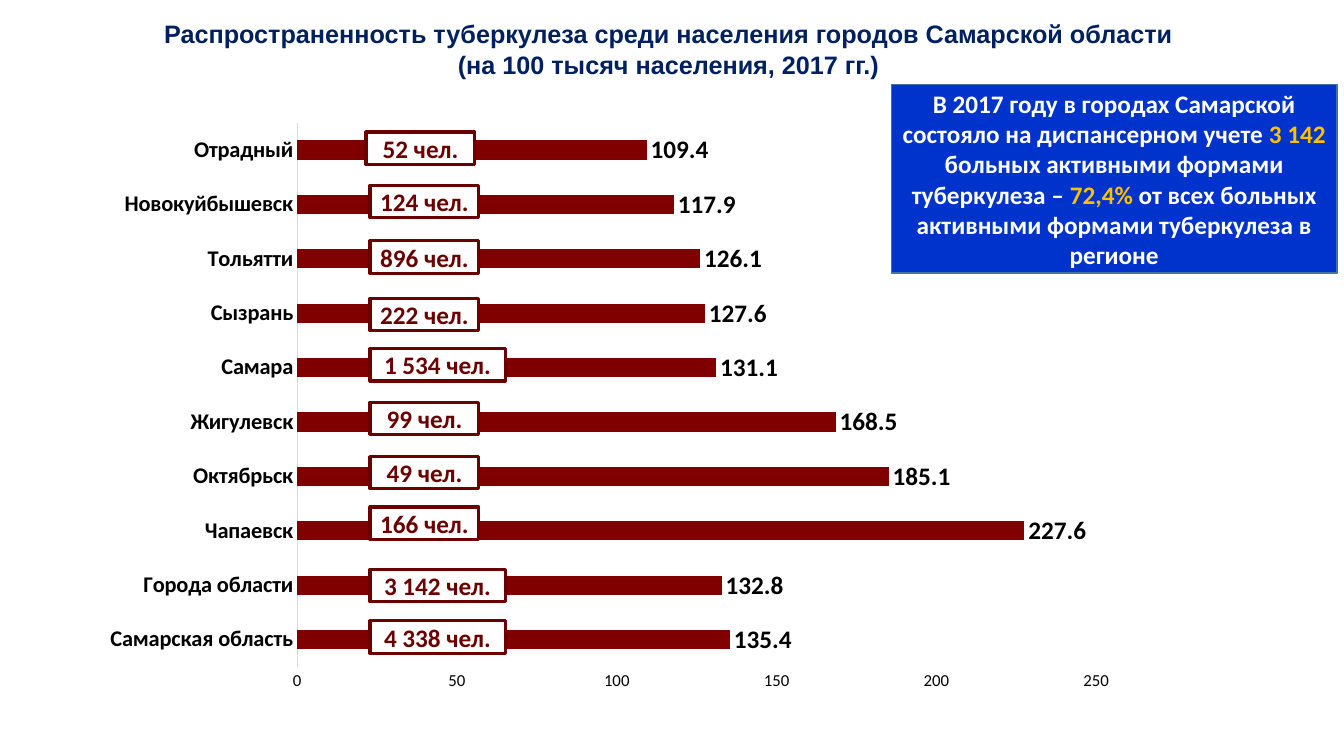
import pptx
import pptx.chart.data
import pptx.dml.color
import pptx.enum.chart
import pptx.enum.shapes
import pptx.enum.text
import pptx.oxml
import pptx.util
from dataclasses import dataclass

Inches = pptx.util.Inches
Pt = pptx.util.Pt
RGB = pptx.dml.color.RGBColor.from_string

# Content
TITLE = [
    "Распространенность туберкулеза среди населения городов Самарской области",
    "(на 100 тысяч населения, 2017 гг.)",
]
# City, rate per 100 thousand, patients, left and top of the patient box
CITIES = [
    ("Отрадный", 109.4, "52 чел.", 3.63, 1.31),
    ("Новокуйбышевск", 117.9, "124 чел.", 3.67, 1.84),
    ("Тольятти", 126.1, "896 чел.", 3.67, 2.39),
    ("Сызрань", 127.6, "222 чел.", 3.67, 2.96),
    ("Самара", 131.1, "1 534 чел.", 3.67, 3.46),
    ("Жигулевск", 168.5, "99 чел.", 3.67, 3.99),
    ("Октябрьск", 185.1, "49 чел.", 3.67, 4.53),
    ("Чапаевск", 227.6, "166 чел.", 3.67, 5.03),
    ("Города области", 132.8, "3 142 чел.", 3.67, 5.65),
    ("Самарская область", 135.4, "4 338 чел.", 3.67, 6.16),
]
# Summary text and whether it is highlighted
SUMMARY = [
    ("В 2017 году в городах Самарской состояло на диспансерном учете ", False),
    ("3 142 ", True),
    ("больных активными формами туберкулеза – ", False),
    ("72,4%", True),
    (" от всех больных активными формами туберкулеза в регионе", False),
]
PLOT_LAYOUT = {"x": 0.2, "y": 0.01, "w": 0.77, "h": 0.91}


@dataclass(frozen=True)
class Theme:
    title_font: str = "Arial"
    body_font: str = "Calibri"
    title: str = "002060"
    text: str = "000000"
    white: str = "FFFFFF"
    highlight: str = "FFC000"
    summary_fill: str = "0033CC"
    summary_line: str = "43739E"
    bar: str = "800000"
    patients: str = "6C0000"
    axis_line: str = "D9D9D9"
    large: int = 18
    category: int = 16
    scale: int = 12


THEME = Theme()


def set_font(font, size, color, bold=True, name=THEME.body_font):
    font.name, font.size, font.bold = name, Pt(size), bold
    font.color.rgb = RGB(color)


def add_box(slide, left, top, width, height, fill, line, line_width):
    """Add a flat rectangle and return its centred paragraph."""
    box = slide.shapes.add_shape(
        pptx.enum.shapes.MSO_SHAPE.RECTANGLE,
        Inches(left), Inches(top), Inches(width), Inches(height))
    box.shadow.inherit = False
    box.fill.solid()
    box.fill.fore_color.rgb = RGB(fill)
    box.line.color.rgb = RGB(line)
    box.line.width = Pt(line_width)
    frame = box.text_frame
    frame.word_wrap = True
    frame.vertical_anchor = pptx.enum.text.MSO_ANCHOR.MIDDLE
    paragraph = frame.paragraphs[0]
    paragraph.alignment = pptx.enum.text.PP_ALIGN.CENTER
    return paragraph


def add_title(slide):
    heading = slide.shapes.add_textbox(
        Inches(1.15), Inches(0.07), Inches(10.96), Inches(0.83)).text_frame
    heading.word_wrap = True
    heading.vertical_anchor = pptx.enum.text.MSO_ANCHOR.MIDDLE
    heading.text = "\n".join(TITLE)
    for paragraph in heading.paragraphs:
        paragraph.alignment = pptx.enum.text.PP_ALIGN.CENTER
        paragraph.line_spacing = Pt(22)
        set_font(paragraph.font, THEME.large, THEME.title, name=THEME.title_font)


def add_rates_chart(slide):
    rates = pptx.chart.data.CategoryChartData()
    bottom_up = CITIES[::-1]
    rates.categories = [city[0] for city in bottom_up]
    rates.add_series("На 100 тысяч населения", [city[1] for city in bottom_up])
    chart = slide.shapes.add_chart(
        pptx.enum.chart.XL_CHART_TYPE.BAR_CLUSTERED,
        Inches(0.89), Inches(1.16), Inches(10.29), Inches(5.93), rates).chart
    chart.has_title = False
    chart.has_legend = False
    set_font(chart.font, 10, THEME.text, bold=False)

    # Bars and their labels
    plot = chart.plots[0]
    plot.gap_width = 182
    plot.vary_by_categories = False
    bars = plot.series[0].format.fill
    bars.solid()
    bars.fore_color.rgb = RGB(THEME.bar)
    plot.has_data_labels = True
    labels = plot.data_labels
    labels.show_value = True
    labels.position = pptx.enum.chart.XL_LABEL_POSITION.OUTSIDE_END
    set_font(labels.font, THEME.large, THEME.text)

    # Axes
    city_axis, rate_axis = chart.category_axis, chart.value_axis
    for axis in (city_axis, rate_axis):
        axis.major_tick_mark = pptx.enum.chart.XL_TICK_MARK.NONE
        axis.minor_tick_mark = pptx.enum.chart.XL_TICK_MARK.NONE
        axis.has_major_gridlines = False
    set_font(city_axis.tick_labels.font, THEME.category, THEME.text)
    city_axis.format.line.color.rgb = RGB(THEME.axis_line)
    city_axis.format.line.width = Pt(0.75)
    set_font(rate_axis.tick_labels.font, THEME.scale, THEME.text, bold=False)
    rate_axis.format.line.fill.background()
    rate_axis.minimum_scale, rate_axis.maximum_scale = 0, 250
    rate_axis.major_unit = 50

    # Fixed inner plot area
    namespace = "http://schemas.openxmlformats.org/drawingml/2006/chart"
    sizes = "".join(f'<c:{key} val="{value}"/>' for key, value in PLOT_LAYOUT.items())
    layout = pptx.oxml.parse_xml(
        f'<c:layout xmlns:c="{namespace}"><c:manualLayout>'
        '<c:layoutTarget val="inner"/><c:xMode val="edge"/><c:yMode val="edge"/>'
        f'{sizes}</c:manualLayout></c:layout>')
    plot_area = chart.element.find(f".//{{{namespace}}}plotArea")
    for automatic in plot_area.findall(f"{{{namespace}}}layout"):
        plot_area.remove(automatic)
    plot_area.insert(0, layout)


def add_summary(slide):
    summary = add_box(slide, 8.84, 0.84, 4.42, 1.87,
                      THEME.summary_fill, THEME.summary_line, 1)
    for text, highlighted in SUMMARY:
        run = summary.add_run()
        run.text = text
        set_font(run.font, THEME.large, THEME.highlight if highlighted else THEME.white)


def add_patient_boxes(slide):
    for _, _, patients, left, top in CITIES:
        width = 1.34 if len(patients) > len("000 чел.") else 1.08
        label = add_box(slide, left, top, width, 0.32,
                        THEME.white, THEME.patients, 2.25)
        label.text = patients
        set_font(label.font, THEME.large, THEME.patients)


def main():
    deck = pptx.Presentation()
    deck.slide_width, deck.slide_height = Inches(13.33), Inches(7.5)
    slide = deck.slides.add_slide(deck.slide_layouts[6])
    add_title(slide)
    add_rates_chart(slide)
    add_summary(slide)
    add_patient_boxes(slide)
    deck.save("out.pptx")


if __name__ == "__main__":
    main()
